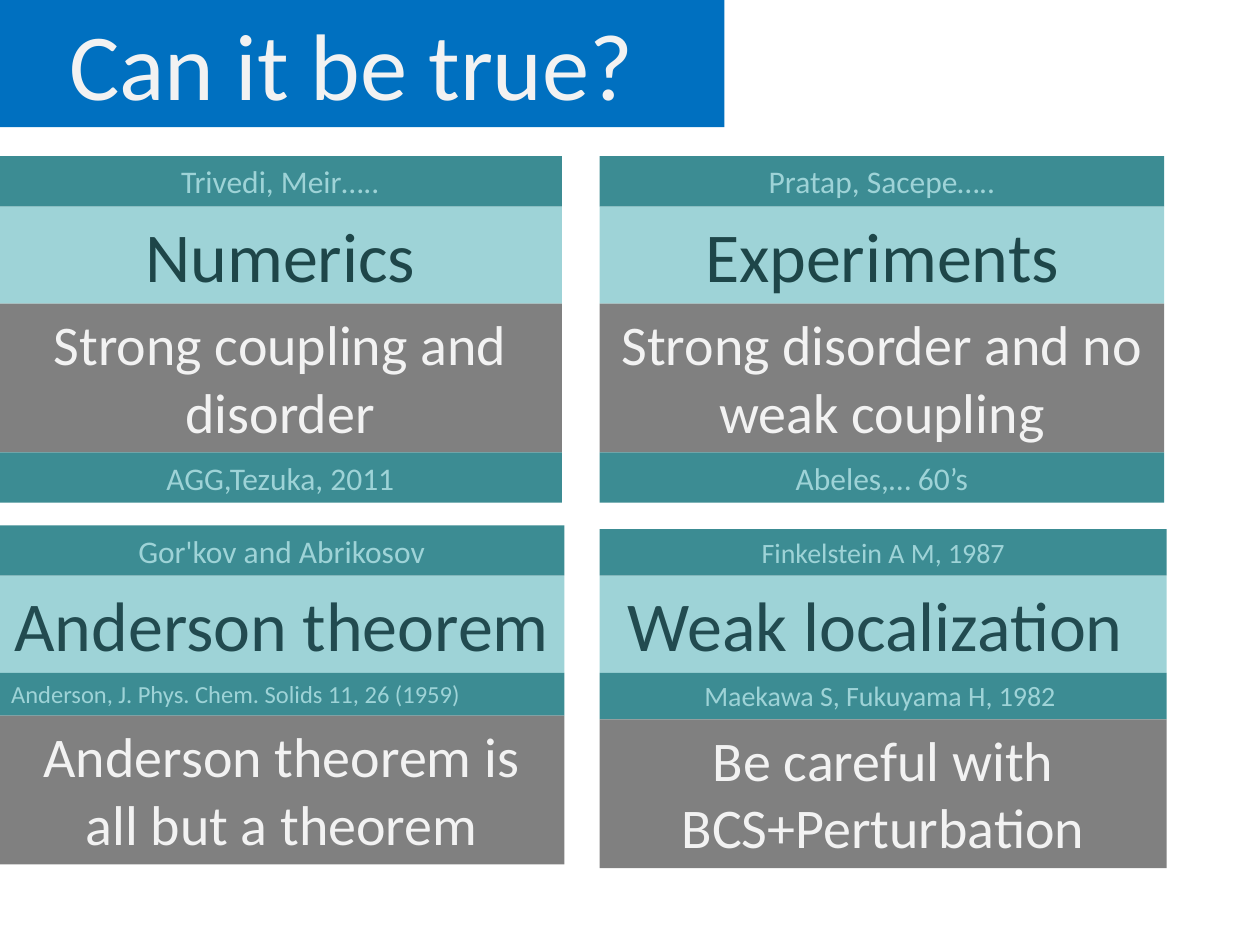
from dataclasses import dataclass

from pptx import Presentation
from pptx.dml.color import RGBColor
from pptx.enum.shapes import MSO_SHAPE
from pptx.enum.text import MSO_ANCHOR, MSO_AUTO_SIZE, PP_ALIGN
from pptx.util import Inches, Pt

RECTANGLE = MSO_SHAPE.RECTANGLE
TOP = MSO_ANCHOR.TOP
GROW = MSO_AUTO_SIZE.SHAPE_TO_FIT_TEXT
LEFT = PP_ALIGN.LEFT
CENTER = PP_ALIGN.CENTER


@dataclass(frozen=True)
class Band:
    height: float
    fill: str
    color: str
    size: int
    align: PP_ALIGN = CENTER


@dataclass(frozen=True)
class Theme:
    font: str = "Calibri"
    title: Band = Band(1.01, "0070C0", "F2F2F2", 54)
    headline: Band = Band(0.77, "9ED3D7", "1E4649", 40)
    theory: Band = Band(0.77, "9ED3D7", "224B50", 40)
    claim: Band = Band(1.18, "808080", "F2F2F2", 32)
    citation: Band = Band(0.4, "3C8C93", "9ED3D7", 18)
    reference: Band = Band(0.37, "3C8C93", "9ED3D7", 16)
    journal: Band = Band(0.34, "3C8C93", "9ED3D7", 14, LEFT)


THEME = Theme()
LEFT_COLUMN = -0.01
RIGHT_COLUMN = 4.76

PANELS = [
    (LEFT_COLUMN, 1.24, 4.47, [
        (THEME.citation, "Trivedi, Meir….."),
        (THEME.headline, "Numerics"),
        (THEME.claim, "Strong coupling and disorder"),
        (THEME.citation, "AGG,Tezuka, 2011"),
    ]),
    (RIGHT_COLUMN, 1.24, 4.48, [
        (THEME.citation, "Pratap, Sacepe….."),
        (THEME.headline, "Experiments"),
        (THEME.claim, "Strong disorder and no weak coupling"),
        (THEME.citation, "Abeles,… 60’s"),
    ]),
    (LEFT_COLUMN, 4.17, 4.49, [
        (THEME.citation, "Gor'kov and Abrikosov"),
        (THEME.theory, "Anderson theorem"),
        (THEME.journal, "Anderson, J. Phys. Chem. Solids 11, 26 (1959)"),
        (THEME.claim, "Anderson theorem is all but a theorem"),
    ]),
    (RIGHT_COLUMN, 4.2, 4.5, [
        (THEME.reference, "Finkelstein A M, 1987"),
        (THEME.theory, "Weak localization "),
        (THEME.reference, "Maekawa S, Fukuyama H, 1982 "),
        (THEME.claim, "Be careful with BCS+Perturbation"),
    ]),
]


def add_band(slide, band, text, left, top, width):
    shape = slide.shapes.add_shape(
        RECTANGLE, Inches(left), Inches(top), Inches(width), Inches(band.height)
    )
    shape.shadow.inherit = False
    shape.fill.solid()
    shape.fill.fore_color.rgb = RGBColor.from_string(band.fill)
    shape.line.fill.background()
    frame = shape.text_frame
    frame.word_wrap = True
    frame.auto_size = GROW
    frame.vertical_anchor = TOP
    paragraph = frame.paragraphs[0]
    paragraph.alignment = band.align
    run = paragraph.add_run()
    run.text = text
    run.font.name = THEME.font
    run.font.size = Pt(band.size)
    run.font.color.rgb = RGBColor.from_string(band.color)


def add_panel(slide, left, top, width, rows):
    for band, text in rows:
        add_band(slide, band, text, left, top, width)
        top += band.height


def main():
    presentation = Presentation()
    presentation.slide_width = Inches(10)
    presentation.slide_height = Inches(7.5)
    slide = presentation.slides.add_slide(presentation.slide_layouts[6])
    add_band(slide, THEME.title, "Can it be true? ", 0, 0, 5.75)
    for panel in PANELS:
        add_panel(slide, *panel)
    presentation.save("out.pptx")


if __name__ == "__main__":
    main()
